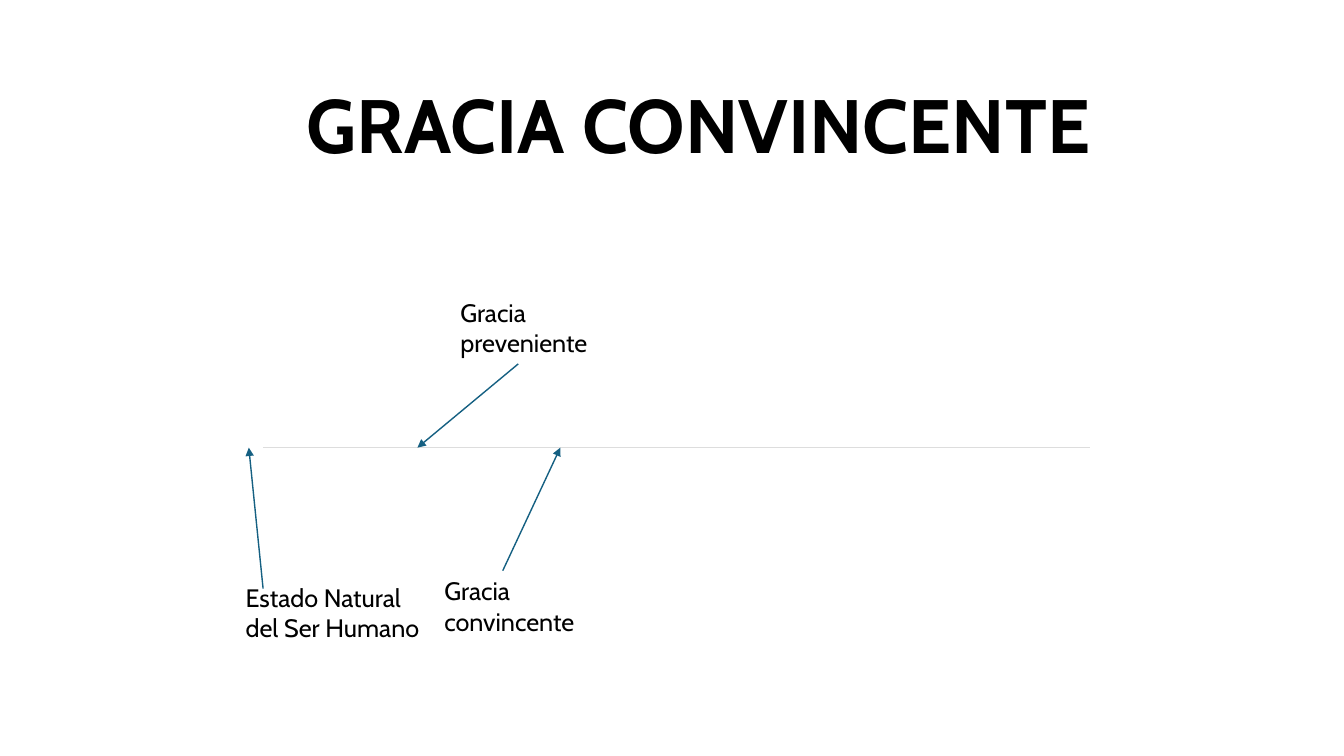
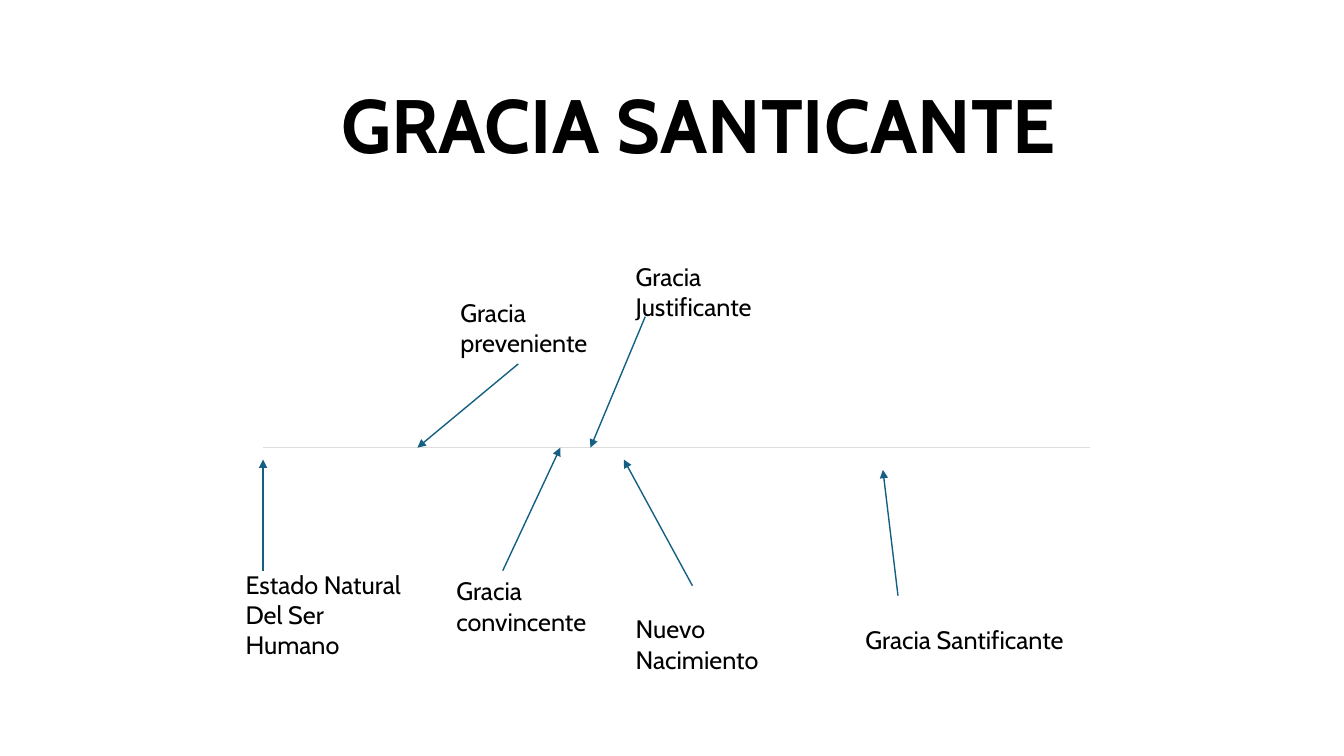
from lxml import etree
from pptx import Presentation
from pptx.dml.color import RGBColor
from pptx.enum.shapes import MSO_CONNECTOR
from pptx.enum.text import MSO_ANCHOR, MSO_AUTO_SIZE, PP_ALIGN
from pptx.oxml.ns import qn
from pptx.util import Cm, Pt

STRAIGHT = MSO_CONNECTOR.STRAIGHT
MIDDLE = MSO_ANCHOR.MIDDLE
CENTER = PP_ALIGN.CENTER
FIT_SHAPE, NO_FIT = MSO_AUTO_SIZE.SHAPE_TO_FIT_TEXT, MSO_AUTO_SIZE.NONE

# Shared style, lengths in centimetres
FONT = "Cabin"
BLACK = RGBColor(0x00, 0x00, 0x00)
TEAL = RGBColor(0x15, 0x60, 0x82)
LIGHT_GRAY = RGBColor(0xDD, 0xDD, 0xDD)
TITLE_BOX = (6.27, 1.24, 23.09, 4.01)
TIMELINE_Y = 11.28
TIMELINE_START, TIMELINE_END = (6.63, TIMELINE_Y), (27.46, TIMELINE_Y)
TITLE_ONLY_LAYOUT = 5

# Each stage: text, label box (left, top, width, height), arrow start, arrow end
PREVENIENTE = ("Gracia preveniente", (11.35, 7.37, 5.41, 1.8),
               (13.06, 9.17), (10.52, TIMELINE_Y))


def convincente(left):
    return ("Gracia convincente", (left, 14.38, 5.11, 1.8),
            (12.67, 14.38), (14.12, TIMELINE_Y))


SLIDES = [
    ("GRACIA CONVINCENTE ", [
        PREVENIENTE,
        convincente(10.95),
        ("Estado Natural del Ser Humano", (5.94, 14.55, 5.0, 2.57),
         (6.63, 14.83), (6.27, TIMELINE_Y)),
    ]),
    ("GRACIA SANTICANTE ", [
        PREVENIENTE,
        convincente(11.25),
        ("Gracia Justificante", (15.77, 6.45, 3.71, 1.8),
         (16.26, 7.98), (14.88, TIMELINE_Y)),
        ("Estado Natural Del Ser Humano", (5.94, 14.22, 4.57, 2.57),
         (6.63, 14.38), (6.63, 11.58)),
        ("Gracia Santificante", (21.56, 15.6, 6.88, 1.02),
         (22.63, 15.01), (22.25, 11.84)),
        ("Nuevo Nacimiento", (15.77, 15.34, 4.85, 1.8),
         (17.45, 14.76), (15.72, 11.58)),
    ]),
]


def style_text(paragraph, size, bold=False):
    font = paragraph.font
    font.name, font.size, font.bold = FONT, Pt(size), bold
    font.color.rgb = BLACK


def add_title(slide, text):
    title = slide.shapes.title
    title.left, title.top, title.width, title.height = map(Cm, TITLE_BOX)
    frame = title.text_frame
    frame.text = text
    frame.auto_size = NO_FIT
    frame.vertical_anchor = MIDDLE
    paragraph = frame.paragraphs[0]
    paragraph.alignment = CENTER
    paragraph.line_spacing = 0.9
    style_text(paragraph, 54, bold=True)


def add_line(slide, start, end, color, width=1, arrow=False):
    connector = slide.shapes.add_connector(STRAIGHT, *map(Cm, start + end))
    connector.line.color.rgb = color
    connector.line.width = Pt(width)
    if arrow:
        outline = connector.line._get_or_add_ln()
        etree.SubElement(outline, qn("a:tailEnd"), type="triangle")
    etree.SubElement(connector._element.spPr, qn("a:effectLst"))


def add_label(slide, text, box):
    label = slide.shapes.add_textbox(*map(Cm, box))
    frame = label.text_frame
    frame.word_wrap = True
    frame.auto_size = FIT_SHAPE
    frame.text = text
    style_text(frame.paragraphs[0], 18)


def main():
    presentation = Presentation()
    presentation.slide_width, presentation.slide_height = Cm(33.87), Cm(19.05)
    layout = presentation.slide_layouts[TITLE_ONLY_LAYOUT]
    for title, stages in SLIDES:
        slide = presentation.slides.add_slide(layout)
        add_title(slide, title)
        add_line(slide, TIMELINE_START, TIMELINE_END, LIGHT_GRAY, width=0.75)
        for text, box, start, end in stages:
            add_line(slide, start, end, TEAL, arrow=True)
            add_label(slide, text, box)
    presentation.save("out.pptx")


if __name__ == "__main__":
    main()
